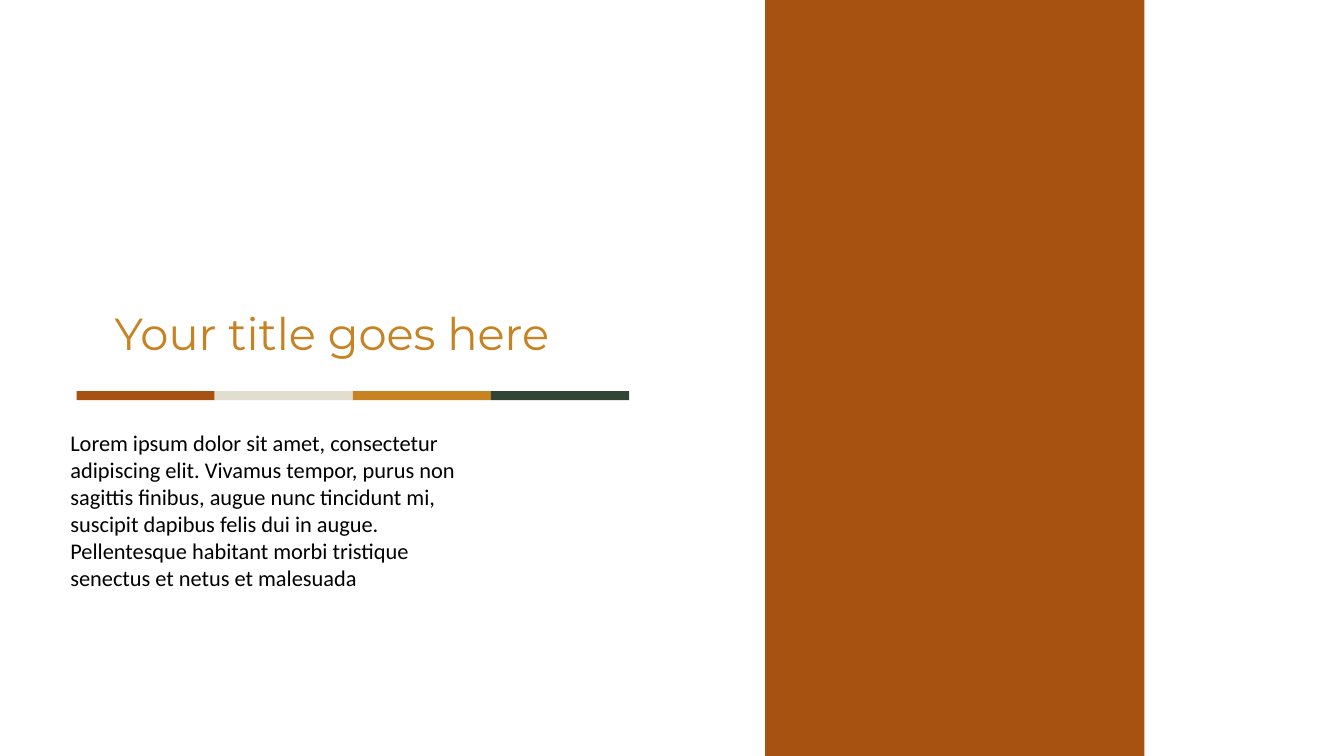
from pptx import Presentation
from pptx import util as u
from pptx.dml.color import RGBColor
from pptx.enum import shapes, text

RUST = RGBColor(0xA7, 0x52, 0x11)
SAND = RGBColor(0xE1, 0xDE, 0xCF)
OCHRE = RGBColor(0xC7, 0x83, 0x22)
FOREST = RGBColor(0x32, 0x44, 0x36)
BLACK = RGBColor(0, 0, 0)

SLIDE_WIDTH, SLIDE_HEIGHT = 13.33, 7.5
TITLE = "Your title goes here"
BODY = (
    "Lorem ipsum dolor sit amet, consectetur adipiscing elit. Vivamus tempor, "
    "purus non sagittis finibus, augue nunc tincidunt mi, suscipit dapibus felis "
    "dui in augue. Pellentesque habitant morbi tristique senectus et netus et malesuada"
)


def inches(box):
    return [u.Inches(length) for length in box]


def add_rectangle(container, box, color):
    shape = container.add_shape(shapes.MSO_SHAPE.RECTANGLE, *inches(box))
    shape.shadow.inherit = False
    shape.fill.solid()
    shape.fill.fore_color.rgb = color
    shape.line.fill.background()


def write_text(shape, content, *, font, size, color, align=text.PP_ALIGN.LEFT):
    frame = shape.text_frame
    frame.word_wrap = True
    frame.auto_size = text.MSO_AUTO_SIZE.SHAPE_TO_FIT_TEXT
    frame.vertical_anchor = text.MSO_ANCHOR.TOP
    paragraph = frame.paragraphs[0]
    paragraph.alignment = align
    run = paragraph.add_run()
    run.text = content
    run.font.name = font
    run.font.size = u.Pt(size)
    run.font.color.rgb = color


def place_title(slide, box):
    title = slide.shapes.title
    title.left, title.top, title.width, title.height = inches(box)
    write_text(title, TITLE, font="Montserrat", size=32, color=OCHRE,
               align=text.PP_ALIGN.CENTER)


def add_body(slide, box):
    body = slide.shapes.add_textbox(*inches(box))
    write_text(body, BODY, font="Calibri", size=16, color=BLACK)


def add_color_strip(slide, box, colors):
    left, top, width, height = box
    segment = width / len(colors)
    strip = slide.shapes.add_group_shape()
    for column, color in enumerate(colors):
        add_rectangle(strip.shapes, (left + column * segment, top, segment, height), color)


def build_title_slide(presentation):
    slide = presentation.slides.add_slide(presentation.slide_layouts[5])
    add_rectangle(slide.shapes, (7.59, 0, 3.76, SLIDE_HEIGHT), RUST)
    add_body(slide, (0.6, 4.21, 4.27, 1.72))
    place_title(slide, (0.76, 2.98, 5.07, 0.64))
    add_color_strip(slide, (0.76, 3.88, 5.48, 0.09), (RUST, SAND, OCHRE, FOREST))


def main():
    presentation = Presentation()
    presentation.slide_width = u.Inches(SLIDE_WIDTH)
    presentation.slide_height = u.Inches(SLIDE_HEIGHT)
    build_title_slide(presentation)
    presentation.save("out.pptx")


if __name__ == "__main__":
    main()
